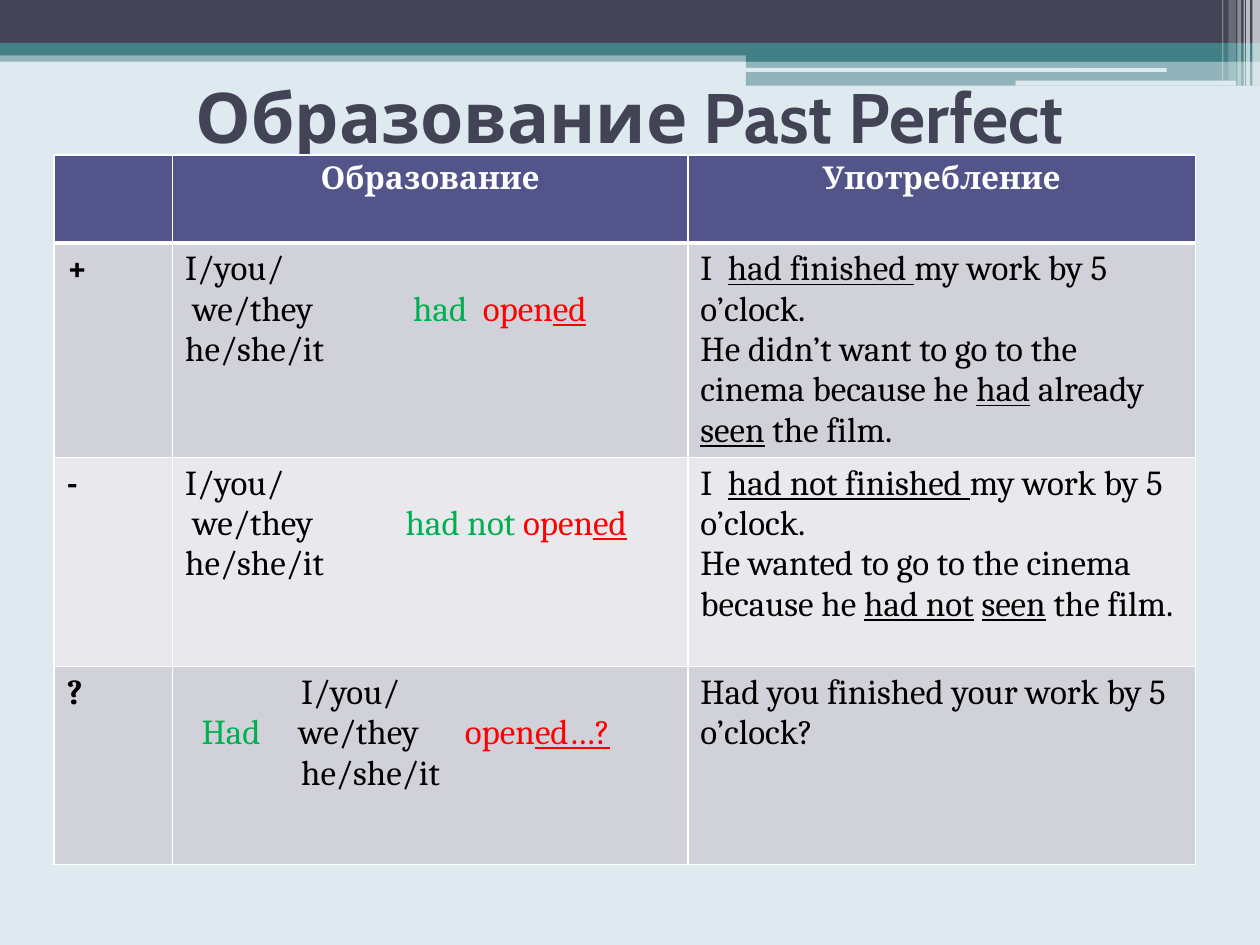
from lxml.etree import SubElement
from pptx import Presentation
from pptx.dml.color import RGBColor
from pptx.enum.shapes import MSO_SHAPE as Shape
from pptx.enum.text import MSO_ANCHOR as Anchor, MSO_AUTO_SIZE as AutoSize, PP_ALIGN as Align
from pptx.oxml.ns import qn
from pptx.util import Inches, Pt

COLORS = {
    "background": "DEE9F0", "dark": "424456", "teal": "438086", "white": "FFFFFF",
    "header": "53548A", "odd": "D1D1DA", "even": "E9E9ED",
    "black": "000000", "green": "00B050", "red": "FF0000",
}
BARS = [
    (0, 0.4, 10, 0.09, "teal", 50),
    (0, 0, 10, 0.34, "dark", 100),
    (0, 0.34, 10, 0.1, "teal", 100),
    (5.92, 0.39, 4.08, 0.1, "teal", 100),
    (5.92, 0.48, 4.08, 0.2, "teal", 50),
]
ROUNDED_BARS = [(5.91, 0.54, 3.35, 0.03), (8.06, 0.64, 1.75, 0.04)]
STRIPES = [
    (9.94, 0.06, 0.68, 65), (9.89, 0.03, 0.68, 65), (9.87, 0.01, 0.68, 60),
    (9.82, 0.03, 0.68, 40), (9.75, 0.06, 0.64, 20), (9.7, 0.01, 0.64, 30),
]
STYLES = {
    "plain": ("black", False), "underlined": ("black", True),
    "auxiliary": ("green", False), "verb": ("red", False), "ending": ("red", True),
}
COLUMN_WIDTHS = [0.94, 4.09, 4.03]
ROW_HEIGHTS = [0.7, 1.66, 1.66, 1.57]
HEADINGS = ["", "Образование", "Употребление"]


def statement(auxiliary):
    return [
        [("I/you/", "plain")],
        [("\twe/they\t", "plain"), (auxiliary, "auxiliary"), ("open", "verb"), ("ed", "ending")],
        [("he/she/it", "plain")],
    ]


QUESTION = [
    [("\tI/you/", "plain")],
    [("\tHad", "auxiliary"), ("\twe/they\t", "plain"), ("open", "verb"), ("ed…?", "ending")],
    [("\the/she/it", "plain")],
]


def finished_example(auxiliary):
    return [("I  ", "plain"), (auxiliary + " finished ", "underlined"),
            ("my work by 5 o’clock.", "plain")]


ROWS = [
    ("+", statement("had  "), [[], [0.06, 1.81], []], [
        finished_example("had"),
        [("He didn’t want to go to the cinema because he ", "plain"), ("had", "underlined"),
         (" already ", "plain"), ("seen", "underlined"), (" the film.", "plain")],
    ]),
    ("-", statement("had not "), [[], [0.06, 1.75], []], [
        finished_example("had not"),
        [("He wanted to go to the cinema because he ", "plain"), ("had not", "underlined"),
         (" ", "plain"), ("seen", "underlined"), (" the film.", "plain")],
    ]),
    ("?", QUESTION, [[0.92], [0.13, 0.9, 2.22], [0.92]],
     [[("Had you finished your work by 5 o’clock?", "plain")]]),
]


def rgb(name):
    return RGBColor.from_string(COLORS[name])


def format_run(run, font, size, color, bold=False, underline=False):
    run.font.name = font
    run.font.size = Pt(size)
    run.font.bold = bold
    run.font.underline = underline
    run.font.color.rgb = rgb(color)


def add_bar(slide, left, top, width, height, color, opacity=100, kind=Shape.RECTANGLE):
    bar = slide.shapes.add_shape(kind, Inches(left), Inches(top), Inches(width), Inches(height))
    bar.shadow.inherit = False
    bar.line.fill.background()
    bar.fill.solid()
    bar.fill.fore_color.rgb = rgb(color)
    if opacity < 100:
        color_element = bar.fill._xPr.find(qn("a:solidFill"))[0]
        SubElement(color_element, qn("a:alpha"), val=str(opacity * 1000))


def add_decoration(slide):
    for bar in BARS:
        add_bar(slide, *bar)
    for bar in ROUNDED_BARS:
        add_bar(slide, *bar, "background", kind=Shape.ROUNDED_RECTANGLE)
    for left, width, height, opacity in STRIPES:
        add_bar(slide, left, 0, width, height, "white", opacity)


def set_title(slide, text):
    title = slide.shapes.title
    title.left, title.top = Inches(0.5), Inches(0.21)
    title.width, title.height = Inches(9), Inches(1.42)
    frame = title.text_frame
    frame.text = text
    frame.auto_size = AutoSize.NONE
    frame.vertical_anchor = Anchor.MIDDLE
    frame.paragraphs[0].alignment = Align.CENTER
    format_run(frame.paragraphs[0].runs[0], "Cabin", 40, "dark", bold=True)


def style_cell(cell, fill, bottom=1, top=1):
    properties = cell._tc.get_or_add_tcPr()
    for side, width in (("L", 1), ("R", 1), ("T", top), ("B", bottom)):
        line = SubElement(properties, qn("a:ln" + side), w=str(Pt(width)))
        SubElement(SubElement(line, qn("a:solidFill")), qn("a:srgbClr"), val=COLORS["white"])
    cell.fill.solid()
    cell.fill.fore_color.rgb = rgb(fill)


def write_label(cell, text, size, color, alignment):
    cell.text = text
    paragraph = cell.text_frame.paragraphs[0]
    paragraph.alignment = alignment
    for run in paragraph.runs:
        format_run(run, "Cambria", size, color, bold=True)


def set_tabs(paragraph, stops):
    tab_list = SubElement(paragraph._p.get_or_add_pPr(), qn("a:tabLst"))
    for stop in stops:
        SubElement(tab_list, qn("a:tab"), pos=str(Inches(stop)), algn="l")


def write_lines(cell, lines, tabs=None):
    frame = cell.text_frame
    for index, line in enumerate(lines):
        paragraph = frame.add_paragraph() if index else frame.paragraphs[0]
        if tabs and tabs[index]:
            set_tabs(paragraph, tabs[index])
        for text, style in line:
            run = paragraph.add_run()
            run.text = text
            color, underline = STYLES[style]
            format_run(run, "Cambria", 20, color, underline=underline)


def add_grammar_table(slide):
    table = slide.shapes.add_table(
        len(ROW_HEIGHTS), len(COLUMN_WIDTHS), Inches(0.43), Inches(1.23),
        Inches(sum(COLUMN_WIDTHS)), Inches(sum(ROW_HEIGHTS))).table
    for column, width in zip(table.columns, COLUMN_WIDTHS):
        column.width = Inches(width)
    for index, (row, height) in enumerate(zip(table.rows, ROW_HEIGHTS)):
        row.height = Inches(height)
        fill = "header" if index == 0 else "odd" if index % 2 else "even"
        for cell in row.cells:
            style_cell(cell, fill, bottom=3 if index == 0 else 1, top=3 if index == 1 else 1)
    for column, heading in enumerate(HEADINGS):
        write_label(table.cell(0, column), heading, 18, "white", Align.CENTER)
    for index, (sign, formation, tabs, usage) in enumerate(ROWS, start=1):
        write_label(table.cell(index, 0), sign, 20, "black", Align.LEFT)
        write_lines(table.cell(index, 1), formation, tabs)
        write_lines(table.cell(index, 2), usage)


def main():
    presentation = Presentation()
    presentation.slide_width, presentation.slide_height = Inches(10), Inches(7.5)
    slide = presentation.slides.add_slide(presentation.slide_layouts[5])
    slide.background.fill.solid()
    slide.background.fill.fore_color.rgb = rgb("background")
    add_decoration(slide)
    set_title(slide, "Образование Past Perfect")
    add_grammar_table(slide)
    presentation.save("out.pptx")


if __name__ == "__main__":
    main()
